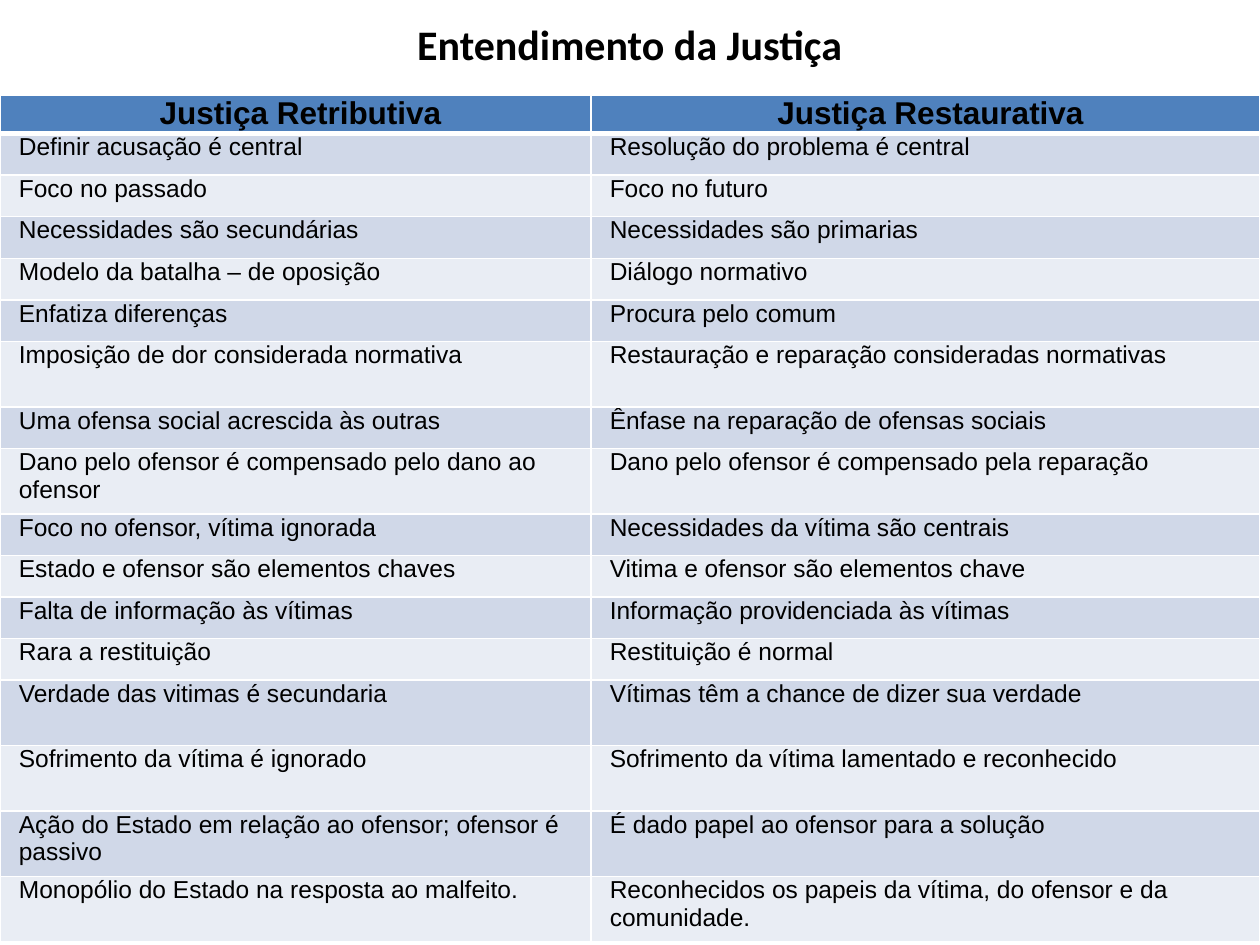
from lxml.etree import SubElement
from pptx import Presentation
from pptx.dml.color import RGBColor
from pptx.enum.text import MSO_ANCHOR, PP_ALIGN
from pptx.oxml.ns import qn
from pptx.util import Emu, Inches, Pt

THEME = {
    "text": RGBColor.from_string("000000"),
    "header": RGBColor.from_string("4F81BD"),
    "bands": [RGBColor.from_string("D0D8E8"), RGBColor.from_string("E9EDF4")],
    "border": "FFFFFF",
    "title_font": "Calibri", "table_font": "Arial",
    "title_size": Pt(24), "header_size": Pt(18), "body_size": Pt(14),
}
SHORT, TALL = Inches(0.33), Inches(0.52)

HEADERS = ("Justiça Retributiva", "Justiça Restaurativa")
COMPARISONS = [
    (SHORT, "Definir acusação é central", "Resolução do problema é central"),
    (SHORT, "Foco no passado", "Foco no futuro"),
    (SHORT, "Necessidades são secundárias", "Necessidades são primarias"),
    (SHORT, "Modelo da batalha – de oposição", "Diálogo normativo"),
    (SHORT, "Enfatiza diferenças", "Procura pelo comum"),
    (TALL, "Imposição de dor considerada normativa",
     "Restauração e reparação consideradas normativas"),
    (SHORT, "Uma ofensa social acrescida às outras",
     "Ênfase na reparação de ofensas sociais"),
    (TALL, "Dano pelo ofensor é compensado pelo dano ao ofensor",
     "Dano pelo ofensor é compensado pela reparação"),
    (SHORT, "Foco no ofensor, vítima ignorada", "Necessidades da vítima são centrais"),
    (SHORT, "Estado e ofensor são elementos chaves",
     "Vitima e ofensor são elementos chave"),
    (SHORT, "Falta de informação às vítimas", "Informação providenciada às vítimas"),
    (SHORT, "Rara a restituição", "Restituição é normal"),
    (TALL, "Verdade das vitimas é secundaria",
     "Vítimas têm a chance de dizer sua verdade"),
    (TALL, "Sofrimento da vítima é ignorado",
     "Sofrimento da vítima lamentado e reconhecido"),
    (TALL, "Ação do Estado em relação ao ofensor; ofensor é passivo",
     "É dado papel ao ofensor para a solução"),
    (TALL, "Monopólio do Estado na resposta ao malfeito.",
     "Reconhecidos os papeis da vítima, do ofensor e da comunidade."),
]


def style_text(paragraph, font_name, size, bold, alignment):
    paragraph.alignment = alignment
    paragraph.font.name = font_name
    paragraph.font.size = size
    paragraph.font.bold = bold
    paragraph.font.color.rgb = THEME["text"]


def add_borders(cell, widths):
    properties = cell._tc.get_or_add_tcPr()
    for side, width in widths.items():
        line = SubElement(properties, qn(f"a:ln{side}"), w=str(Pt(width)))
        fill = SubElement(line, qn("a:solidFill"))
        SubElement(fill, qn("a:srgbClr"), val=THEME["border"])


presentation = Presentation()
presentation.slide_width, presentation.slide_height = Inches(10), Inches(7.5)
slide = presentation.slides.add_slide(presentation.slide_layouts[5])

# Title
title = slide.shapes.title
title.left, title.top = Inches(0.5), 0
title.width, title.height = Inches(9.07), Inches(0.6)
title.text_frame.text = "Entendimento da Justiça "
title.text_frame.vertical_anchor = MSO_ANCHOR.BOTTOM
style_text(title.text_frame.paragraphs[0], THEME["title_font"],
           THEME["title_size"], True, PP_ALIGN.CENTER)

# Comparison table
rows = [(Inches(0.3), *HEADERS), *COMPARISONS]
table_height = Emu(sum(row[0] for row in rows))
table = slide.shapes.add_table(len(rows), 2, 0, Inches(0.76),
                               presentation.slide_width, table_height).table
table.columns[0].width = Inches(4.69)
table.columns[1].width = presentation.slide_width - table.columns[0].width

for row_index, (height, *texts) in enumerate(rows):
    is_header = row_index == 0
    table.rows[row_index].height = height
    for column_index, text in enumerate(texts):
        cell = table.cell(row_index, column_index)
        cell.text = text
        cell.margin_left = cell.margin_right = Inches(0.07)
        cell.margin_top = cell.margin_bottom = 0

        # The header is set off by a thicker line below it
        add_borders(cell, {"L": 1, "R": 1, "T": 3 if row_index == 1 else 1,
                           "B": 3 if is_header else 1})
        cell.fill.solid()
        cell.fill.fore_color.rgb = (
            THEME["header"] if is_header else THEME["bands"][(row_index - 1) % 2])

        paragraph = cell.text_frame.paragraphs[0]
        paragraph._p.get_or_add_pPr().set("marL", str(Inches(0.08)))
        paragraph.space_after = Pt(3)
        style_text(paragraph, THEME["table_font"],
                   THEME["header_size"] if is_header else THEME["body_size"],
                   is_header, PP_ALIGN.CENTER if is_header else PP_ALIGN.LEFT)

presentation.save("out.pptx")
